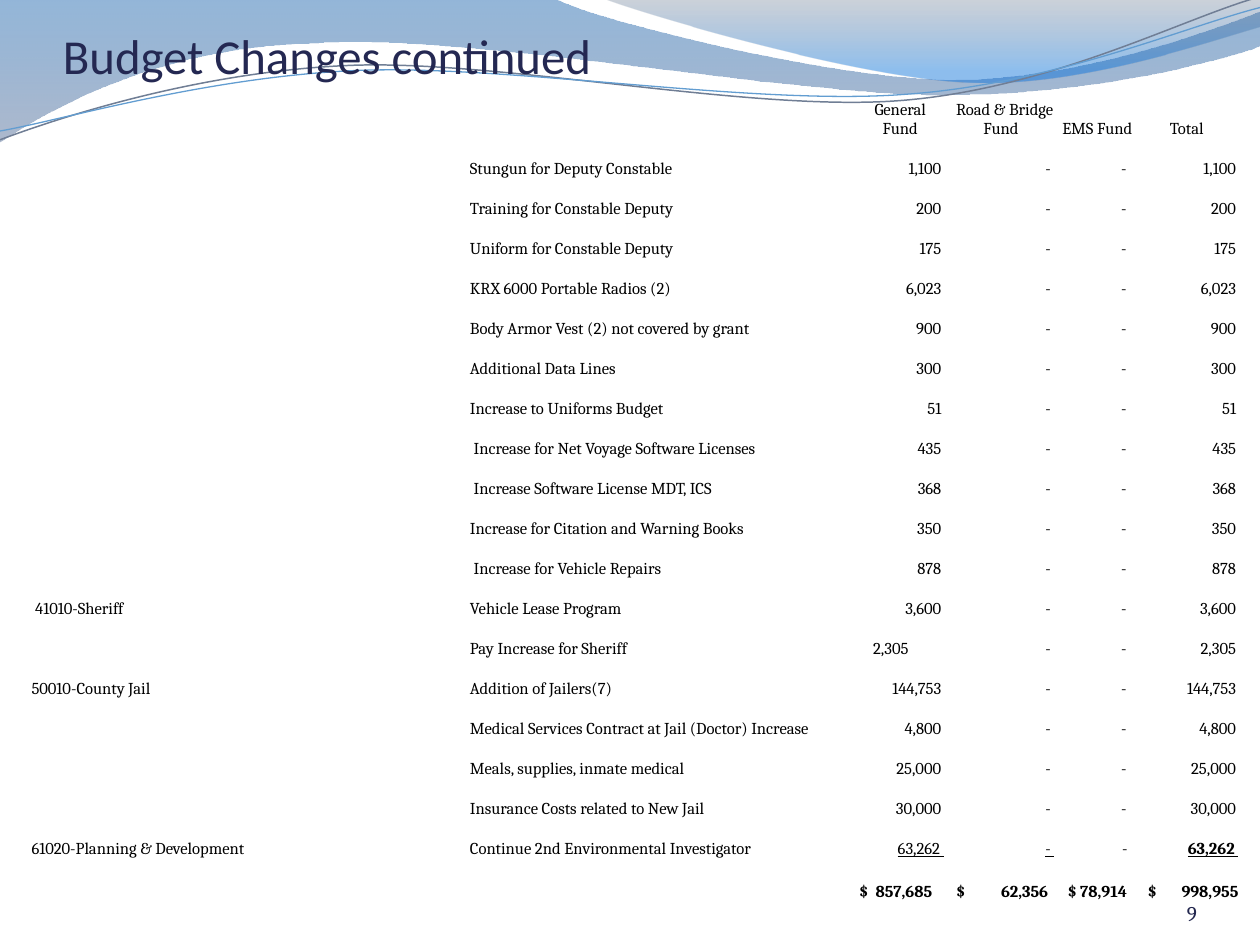
from lxml import etree
from pptx import Presentation
from pptx.dml.color import RGBColor
from pptx.enum.text import MSO_ANCHOR, PP_ALIGN
from pptx.oxml.ns import qn
from pptx.util import Inches, Pt

COLORS = {
    "title": "242852", "number": "22264E", "text": "000000",
    "deep": "125EAA", "dusk": "697FA4", "slate": "596982", "sky": "0670DA",
    "gray_wave": "707E95", "blue_wave": "629DD1",
}
NO_GRID = "{2D5ABB26-0587-4C30-8999-92F81FD0307C}"
LEFT, CENTER, RIGHT = PP_ALIGN.LEFT, PP_ALIGN.CENTER, PP_ALIGN.RIGHT

COLUMNS = [2.1, 1.38, 0.24, 2.82, 0.71, 0.92, 0.58, 0.84]
HEADER_ROW, ITEM_ROW, TOTAL_ROW = 0.35, 5.72 / 18, 0.34
HEADERS = ["General Fund", " Road & Bridge Fund ", "EMS Fund", "Total"]
ITEMS = [
    ("", "Stungun for Deputy Constable", "1,100"),
    ("", "Training for Constable Deputy", "200"),
    ("", "Uniform for Constable Deputy", "175"),
    ("", "KRX 6000 Portable Radios (2)", "6,023"),
    ("", "Body Armor Vest (2) not covered by grant", "900"),
    ("", "Additional Data Lines", "300"),
    ("", "Increase to Uniforms Budget", "51"),
    ("", " Increase for Net Voyage Software Licenses", "435"),
    ("", " Increase Software License MDT, ICS", "368"),
    ("", "Increase for Citation and Warning Books", "350"),
    ("", " Increase for Vehicle Repairs", "878"),
    (" 41010-Sheriff", "Vehicle Lease Program", "3,600"),
    ("", "Pay Increase for Sheriff", "2,305"),
    ("50010-County Jail", "Addition of Jailers(7)", "144,753"),
    ("", "Medical Services Contract at Jail (Doctor) Increase", "4,800"),
    ("", "Meals, supplies, inmate medical", "25,000"),
    ("", "Insurance Costs related to New Jail", "30,000"),
    ("61020-Planning & Development", "Continue 2nd Environmental Investigator", "63,262"),
]
SHERIFF_PAY_ROW = 13
UNDERLINED = [(0.1, 0.6), (0.05, 0.82), (0.02, 0.54), (0.08, 0.75)]
TOTALS = [("857,685", 0.03, 0.58), ("62,356", 0.09, 0.73), None, ("998,955", 0.11, 0.72)]

BROAD_WAVE = [(0, 0), (4.4, -0.01), (4.76, 0.17, 6.64, 0.63, 7.58, 0.63),
              (8.53, 0.63, 9.58, 0.26, 10, 0.09), (10.01, 0.36),
              (9.83, 0.44, 8.7, 0.76, 7.46, 0.75), (6.22, 0.75, 3.82, 0.28, 2.57, 0.34),
              (1.29, 0.36, 0.46, 0.83, -0.01, 1.13), (0, 0)]
CORNER_WAVE = [(4.79, -0.01), (5.09, 0.11, 6.82, 0.62, 7.69, 0.65),
               (8.56, 0.69, 9.61, 0.32, 10, 0.21), (10, 0), (4.79, -0.01)]
GRAY_WAVE = [(0, 1.11), (0.48, 0.93, 1.58, 0.57, 2.77, 0.52),
             (3.95, 0.47, 5.93, 0.89, 7.13, 0.8), (8.33, 0.71, 9.38, 0.15, 9.98, -0.02)]
BLUE_WAVE = [(0, 1.04), (0.47, 0.96, 1.64, 0.61, 2.83, 0.56),
             (4.03, 0.51, 5.97, 0.84, 7.17, 0.75), (8.36, 0.67, 9.41, 0.21, 10, 0.06)]


class Deck:
    def __init__(self, prs):
        self.s = prs.slides.add_slide(prs.slide_layouts[6])

    def run(self, p, text, size=9.5, font="Cambria", color="text", bold=False, underline=None):
        r = p.add_run()
        r.text = text
        r.font.size, r.font.name = Pt(size), font
        r.font.bold, r.font.underline = bold, underline
        r.font.color.rgb = RGBColor.from_string(COLORS[color])

    def outline(self, path, closed):
        points = [(Inches(seg[i]), Inches(seg[i + 1]))
                  for seg in path for i in range(0, len(seg), 2)]
        builder = self.s.shapes.build_freeform(*points[0], scale=1.0)
        builder.add_line_segments(points[1:], close=closed)
        sp = builder.convert_to_shape()
        sp.shadow.inherit = False
        lines = iter(list(sp.element.iter(qn("a:lnTo"))))
        for seg in path[1:]:
            first = next(lines)
            if len(seg) == 6:
                first.tag = qn("a:cubicBezTo")
                for _ in range(2):
                    line = next(lines)
                    first.append(line[0])
                    line.getparent().remove(line)
        return sp

    def wave(self, path, stops):
        sp = self.outline(path, True)
        sp.line.fill.background()
        sp.fill.gradient()
        sp.fill.gradient_angle = 270
        for stop, (position, color, _) in zip(sp.fill.gradient_stops, stops):
            stop.position = position
            stop.color.rgb = RGBColor.from_string(COLORS[color])
        for gs, (_, _, opacity) in zip(sp.element.iter(qn("a:gs")), stops):
            etree.SubElement(gs[0], qn("a:alpha"), val=str(opacity * 1000))

    def curve(self, path, color, width):
        sp = self.outline(path, False)
        sp.fill.background()
        sp.line.color.rgb = RGBColor.from_string(COLORS[color])
        sp.line.width = Pt(width)

    def text(self, x, y, w, h, text, size, font, color, align=LEFT):
        tf = self.s.shapes.add_textbox(Inches(x), Inches(y), Inches(w), Inches(h)).text_frame
        tf.word_wrap = True
        tf.vertical_anchor = MSO_ANCHOR.BOTTOM
        tf.margin_left = tf.margin_right = tf.margin_top = tf.margin_bottom = 0
        p = tf.paragraphs[0]
        p.alignment = align
        self.run(p, text, size, font, color)

    def table(self, x, y, heights):
        frame = self.s.shapes.add_table(len(heights), len(COLUMNS), Inches(x), Inches(y),
                                        Inches(sum(COLUMNS)), Inches(sum(heights)))
        next(frame.element.iter(qn("a:tableStyleId"))).text = NO_GRID
        tbl = frame.table
        tbl.first_row = tbl.horz_banding = False
        for col, width in zip(tbl.columns, COLUMNS):
            col.width = Inches(width)
        for row, height in zip(tbl.rows, heights):
            row.height = Inches(height)
        for cell in tbl.iter_cells():
            cell.fill.background()
            cell.vertical_anchor = MSO_ANCHOR.BOTTOM
            cell.margin_left = cell.margin_right = cell.margin_top = cell.margin_bottom = 0
        return tbl

    def cell(self, cell, text, align=LEFT, right=0, bold=False):
        cell.margin_right = Inches(right)
        p = cell.text_frame.paragraphs[0]
        p.alignment = align
        self.run(p, text, bold=bold)

    def tabbed(self, cell, runs, left, tab, bold=False):
        cell.margin_left = Inches(left)
        p = cell.text_frame.paragraphs[0]
        p.alignment = LEFT
        tabs = etree.SubElement(p._p.get_or_add_pPr(), qn("a:tabLst"))
        etree.SubElement(tabs, qn("a:tab"), pos=str(Inches(tab)), algn="r")
        for text, underline in runs:
            self.run(p, text, bold=bold, underline=underline)


def main():
    prs = Presentation()
    prs.slide_width, prs.slide_height = Inches(10), Inches(7.5)
    deck = Deck(prs)

    deck.wave(BROAD_WAVE, [(0, "deep", 45), (1, "dusk", 55)])
    deck.wave(CORNER_WAVE, [(0, "slate", 30), (0.8, "sky", 45)])
    deck.curve(GRAY_WAVE, "gray_wave", 0.85)
    deck.curve(BLUE_WAVE, "blue_wave", 0.75)
    deck.text(0.5, 0.25, 9, 0.42, "Budget Changes continued", 27.9, "Calibri", "title")

    last = len(ITEMS)
    tbl = deck.table(0.25, 0.75, [HEADER_ROW] + [ITEM_ROW] * last + [TOTAL_ROW])
    for c, header in enumerate(HEADERS, 4):
        deck.cell(tbl.cell(0, c), header, CENTER)
    for i, (department, item, amount) in enumerate(ITEMS, 1):
        tbl.cell(i, 2).merge(tbl.cell(i, 3))
        if department:
            deck.cell(tbl.cell(i, 0), department)
        deck.cell(tbl.cell(i, 2), item)
        if i < last:
            pay_gap = 0.26 if i == SHERIFF_PAY_ROW else 0
            deck.cell(tbl.cell(i, 4), f"{amount} ", RIGHT, pay_gap)
            deck.cell(tbl.cell(i, 5), "- ", RIGHT, 0.05)
            deck.cell(tbl.cell(i, 6), "- ", RIGHT, 0.03)
            deck.cell(tbl.cell(i, 7), f"{amount} ", RIGHT)

    final = ITEMS[-1][2]
    closing = [[(f"\t{final} ", True)], [("\t- ", True)],
               [("\t", True), ("- ", False)], [(f"\t{final} ", True)]]
    for c, (runs, (left, tab)) in enumerate(zip(closing, UNDERLINED), 4):
        deck.tabbed(tbl.cell(last, c), runs, left, tab, bold=c == 7)
    for c, total in enumerate(TOTALS, 4):
        cell = tbl.cell(last + 1, c)
        if total:
            amount, left, tab = total
            deck.tabbed(cell, [(f"$\t{amount}", None)], left, tab, bold=True)
        else:
            deck.cell(cell, " $ 78,914 ", CENTER, bold=True)

    deck.text(8.67, 6.95, 0.83, 0.4, "9", 12, "Cambria", "number", RIGHT)
    prs.save("out.pptx")


if __name__ == "__main__":
    main()
